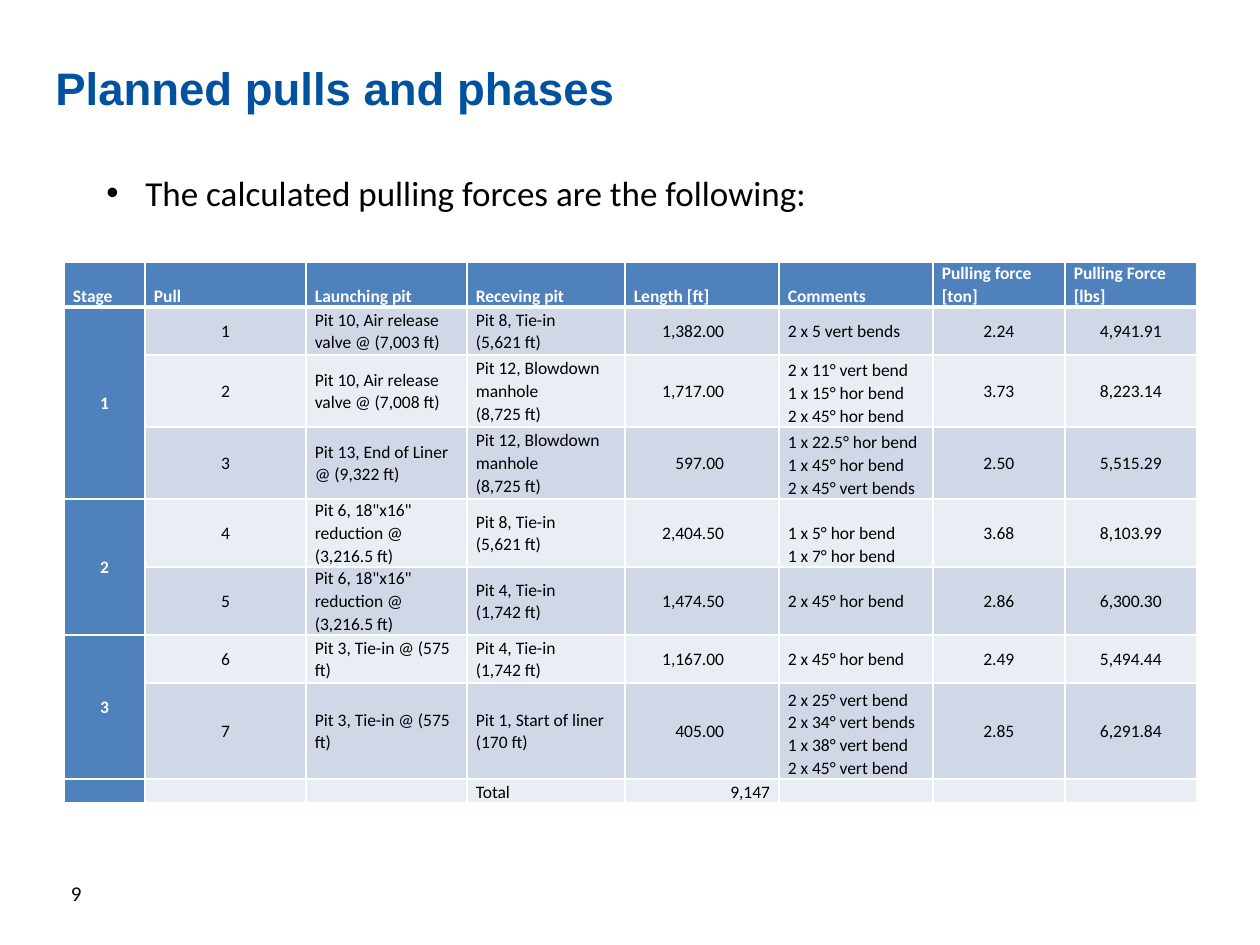
from dataclasses import dataclass

from lxml import etree
from pptx import Presentation
from pptx import util as u
from pptx.dml.color import RGBColor
from pptx.enum import text
from pptx.oxml.ns import qn

PX = 7257  # EMU per px, at 126 px to the inch
LEFT, CENTER, RIGHT = text.PP_ALIGN.LEFT, text.PP_ALIGN.CENTER, text.PP_ALIGN.RIGHT
MIDDLE, BOTTOM = text.MSO_ANCHOR.MIDDLE, text.MSO_ANCHOR.BOTTOM


@dataclass(frozen=True)
class Theme:
    title: str = "00519E"
    ink: str = "000000"
    white: str = "FFFFFF"
    header: str = "4F81BD"
    bands: tuple = ("D0D8E8", "E9EDF4")
    heading_font: str = "Arial"
    body_font: str = "Calibri"
    title_size: int = 26
    body_size: int = 20
    number_size: int = 12
    table_size: int = 10


THEME = Theme()

COLUMN_WIDTHS = [81, 161, 161, 158, 154, 154, 132, 132]
ROW_HEIGHTS = [45, 48, 72, 72, 68, 68, 48, 96, 24]
COLUMN_ALIGN = [CENTER, CENTER, LEFT, LEFT, RIGHT, LEFT, CENTER, CENTER]
LENGTH_COLUMN, COMMENT_COLUMN = 4, 5
STAGES = [(1, 3), (4, 5), (6, 7)]  # first and last row of each stage

# \v is a line break inside a paragraph
ROWS = [
    ["Stage", "Pull", "Launching pit", "Receving pit", "Length [ft]", "Comments",
     "Pulling force [ton]", "Pulling Force [lbs]"],
    ["1", "1", "Pit 10, Air release valve @ (7,003 ft)", "Pit 8, Tie-in\v(5,621 ft)",
     "1,382.00", "2 x 5 vert bends", "2.24", "4,941.91"],
    ["", "2", "Pit 10, Air release valve @ (7,008 ft)", "Pit 12, Blowdown manhole\v(8,725 ft)",
     "1,717.00", "2 x 11° vert bend\v1 x 15° hor bend\v2 x 45° hor bend", "3.73", "8,223.14"],
    ["", "3", "Pit 13, End of Liner @ (9,322 ft)", "Pit 12, Blowdown manhole\v(8,725 ft)",
     "597.00", "1 x 22.5° hor bend\v1 x 45° hor bend\v2 x 45° vert bends", "2.50", "5,515.29"],
    ["2", "4", 'Pit 6, 18"x16" reduction @ (3,216.5 ft)', "Pit 8, Tie-in\v(5,621 ft)",
     "2,404.50", "1 x 5° hor bend\v1 x 7° hor bend", "3.68", "8,103.99"],
    ["", "5", 'Pit 6, 18"x16" reduction @ (3,216.5 ft)', "Pit 4, Tie-in\v(1,742 ft)",
     "1,474.50", "2 x 45° hor bend", "2.86", "6,300.30"],
    ["3", "6", "Pit 3, Tie-in @ (575 ft)", "Pit 4, Tie-in\v(1,742 ft)",
     "1,167.00", "2 x 45° hor bend", "2.49", "5,494.44"],
    ["", "7", "Pit 3, Tie-in @ (575 ft)", "Pit 1, Start of liner\v(170 ft)", "405.00",
     "2 x 25° vert bend\v2 x 34° vert bends\v1 x 38° vert bend\v2 x 45° vert bend",
     "2.85", "6,291.84"],
    ["", "", "", "Total", "9,147", "", "", ""],
]


def px(length):
    return u.Emu(length * PX)


def style_runs(para, font, size, color, bold=False):
    for span in para.runs:
        span.font.name = font
        span.font.size = u.Pt(size)
        span.font.bold = bold
        span.font.color.rgb = RGBColor.from_string(color)


def add_text(page, area, words, font, size, color, bold=False, align=LEFT, top_inset=6):
    box = page.shapes.add_textbox(*map(px, area))
    frame = box.text_frame
    frame.word_wrap = True
    frame.margin_top = px(top_inset)
    frame.text = words
    para = frame.paragraphs[0]
    para.alignment = align
    style_runs(para, font, size, color, bold)
    return box


def add_bullet(para, indent):
    props = para._p.get_or_add_pPr()
    props.set("marL", str(px(indent)))
    props.set("indent", str(-px(indent)))
    etree.SubElement(props, qn("a:buFont"), typeface="Arial")
    etree.SubElement(props, qn("a:buChar"), char="•")


def size_breaks(para, size):
    """Keep line breaks and empty paragraphs at the table's type size."""
    points = str(size * 100)
    for line_break in para._p.findall(qn("a:br")):
        etree.SubElement(line_break, qn("a:rPr"), sz=points)
    if not para.runs:
        etree.SubElement(para._p, qn("a:endParaRPr"), sz=points)


def set_borders(cell, row):
    props = cell._tc.get_or_add_tcPr()
    thick = {(0, "B"), (1, "T")}  # the rule under the header
    for side in "LRTB":
        width = u.Pt(3 if (row, side) in thick else 1)
        line = etree.SubElement(props, qn(f"a:ln{side}"), w=str(width))
        fill = etree.SubElement(line, qn("a:solidFill"))
        etree.SubElement(fill, qn("a:srgbClr"), val=THEME.white)


def fill_cell(cell, row, column, words):
    is_header, is_total = row == 0, row == len(ROWS) - 1
    is_blue = is_header or column == 0
    set_borders(cell, row)
    cell.fill.solid()
    color = THEME.header if is_blue else THEME.bands[(row + 1) % 2]
    cell.fill.fore_color.rgb = RGBColor.from_string(color)
    cell.margin_left = cell.margin_right = px(9)
    cell.margin_top = cell.margin_bottom = 0
    if column == LENGTH_COLUMN and not (is_header or is_total):
        cell.margin_right = px(55)
    stacked = column == COMMENT_COLUMN and "\v" in words
    cell.vertical_anchor = BOTTOM if is_header or is_total or stacked else MIDDLE

    cell.text_frame.text = words
    para = cell.text_frame.paragraphs[0]
    para.alignment = LEFT if is_header else COLUMN_ALIGN[column]
    para.line_spacing = 1.07
    style_runs(para, THEME.body_font, THEME.table_size,
               THEME.white if is_blue else THEME.ink, is_blue)
    size_breaks(para, THEME.table_size)


def add_pull_table(page, left, top):
    frame = page.shapes.add_table(len(ROWS), len(COLUMN_WIDTHS), px(left), px(top),
                                  px(sum(COLUMN_WIDTHS)), px(sum(ROW_HEIGHTS)))
    table = frame.table
    for column, width in zip(table.columns, COLUMN_WIDTHS):
        column.width = px(width)
    for row, height in zip(table.rows, ROW_HEIGHTS):
        row.height = px(height)
    for row, values in enumerate(ROWS):
        for column, words in enumerate(values):
            fill_cell(table.cell(row, column), row, column, words)
    for first, last in STAGES:
        table.cell(first, 0).merge(table.cell(last, 0))


def main():
    deck = Presentation()
    deck.slide_width, deck.slide_height = u.Inches(10), u.Inches(7.5)
    page = deck.slides.add_slide(deck.slide_layouts[6])

    # Page number
    number = add_text(page, (25, 868, 69, 50), "9", THEME.body_font,
                      THEME.number_size, THEME.ink, align=RIGHT)
    number.text_frame.vertical_anchor = MIDDLE

    # Title and lead-in
    add_text(page, (43, 49, 1134, 59), "Planned pulls and phases", THEME.heading_font,
             THEME.title_size, THEME.title, bold=True, top_inset=11)
    lead = add_text(page, (94, 165, 1091, 106),
                    "The calculated pulling forces are the following:",
                    THEME.body_font, THEME.body_size, THEME.ink)
    add_bullet(lead.text_frame.paragraphs[0], 39)

    # Pulling forces by stage
    add_pull_table(page, 64, 262)
    deck.save("out.pptx")


if __name__ == "__main__":
    main()
